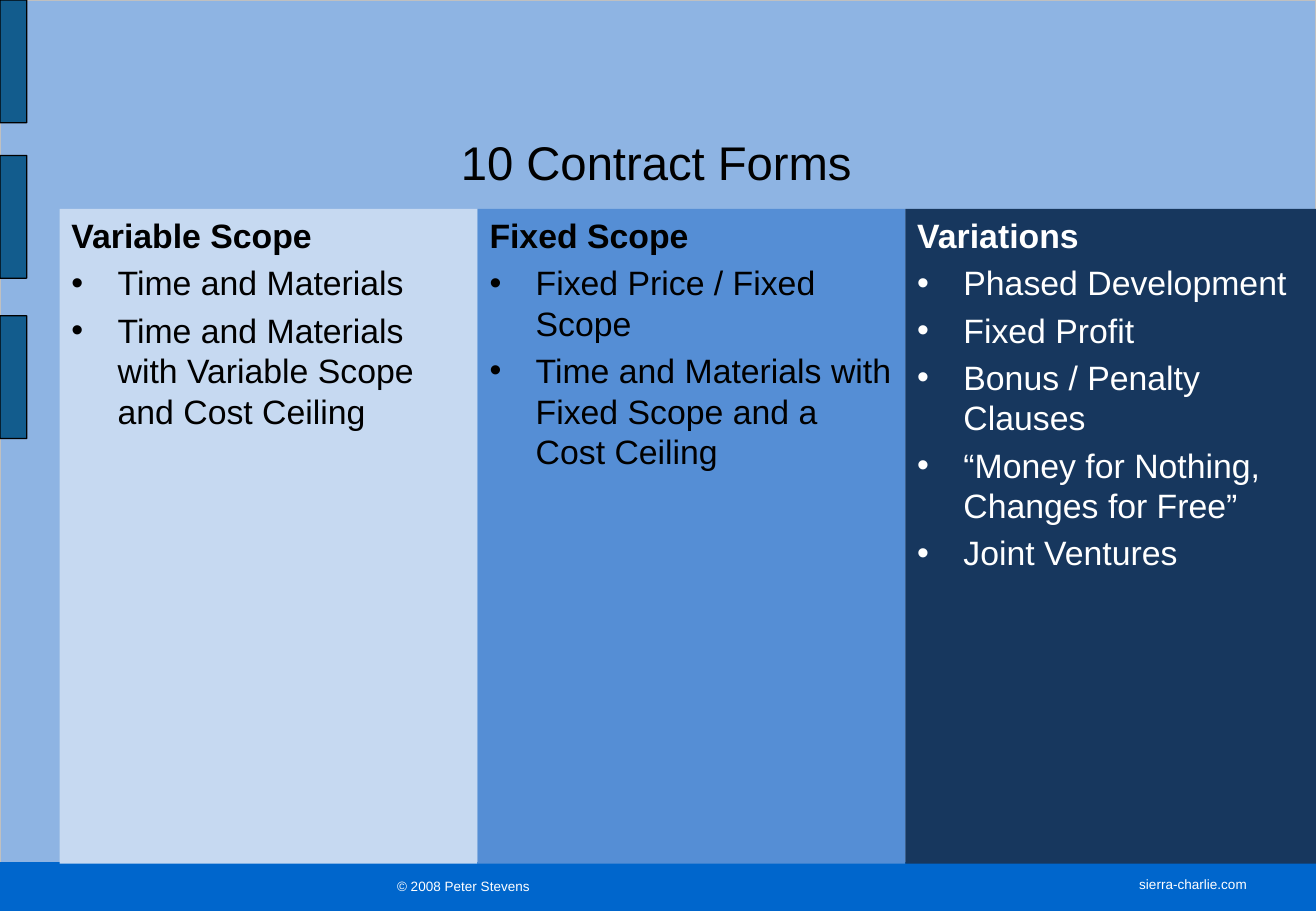
from dataclasses import dataclass

from lxml.etree import SubElement
from pptx import Presentation
from pptx.dml.color import RGBColor
from pptx.enum.shapes import MSO_SHAPE
from pptx.enum.text import MSO_ANCHOR, PP_ALIGN
from pptx.oxml.ns import qn
from pptx.util import Inches, Pt


@dataclass(frozen=True)
class Theme:
    font: str = "Arial"
    backdrop: str = "8EB4E3"
    backdrop_edge: str = "C0C0C0"
    tab: str = "125C8D"
    footer: str = "0066CC"
    pale: str = "C6D9F1"
    medium: str = "558ED5"
    navy: str = "17375E"
    dark: str = "000000"
    light: str = "FFFFFF"
    title_size: int = 28
    body_size: int = 20
    footer_size: int = 8


class ContractSlide:
    def __init__(self, presentation, theme):
        self.theme = theme
        self.slide = presentation.slides.add_slide(presentation.slide_layouts[6])

    def style(self, paragraph, size, color, bold=False):
        for run in paragraph.runs:
            run.font.name = self.theme.font
            run.font.size = Pt(size)
            run.font.bold = bold
            run.font.color.rgb = RGBColor.from_string(color)

    def block(self, kind, left, top, width, height, fill, edge=None):
        block = self.slide.shapes.add_shape(
            kind, Inches(left), Inches(top), Inches(width), Inches(height))
        block.shadow.inherit = False
        block.fill.solid()
        block.fill.fore_color.rgb = RGBColor.from_string(fill)
        if edge:
            block.line.color.rgb = RGBColor.from_string(edge)
            block.line.width = Pt(0.75)
        else:
            block.line.fill.background()
        return block

    def panel(self, left, top, width, height, fill, edge, rounding):
        panel = self.block(
            MSO_SHAPE.ROUNDED_RECTANGLE, left, top, width, height, fill, edge)
        panel.adjustments[0] = rounding

    def title(self, wording, left, top, width, height):
        frame = self.slide.shapes.add_textbox(
            Inches(left), Inches(top), Inches(width), Inches(height)).text_frame
        frame.word_wrap = True
        frame.vertical_anchor = MSO_ANCHOR.MIDDLE
        frame.text = wording
        heading = frame.paragraphs[0]
        heading.alignment = PP_ALIGN.CENTER
        self.style(heading, self.theme.title_size, self.theme.dark)

    def column(self, left, top, width, height, fill, color, heading, forms):
        frame = self.block(
            MSO_SHAPE.RECTANGLE, left, top, width, height, fill).text_frame
        frame.word_wrap = True
        frame.vertical_anchor = MSO_ANCHOR.TOP
        frame.text = "\n".join([heading, *forms])
        for index, entry in enumerate(frame.paragraphs):
            entry.alignment = PP_ALIGN.LEFT
            properties = entry._p.get_or_add_pPr()
            properties.set("marL", str(Inches(0.38)))
            properties.set("indent", str(-Inches(0.38)))
            if index:
                entry.space_before = Pt(4)
                SubElement(properties, qn("a:buFont"), typeface=self.theme.font)
                SubElement(properties, qn("a:buChar"), char="•")
            self.style(entry, self.theme.body_size, color, bold=index == 0)

    def footer(self, left, top, height, widths, wording, top_margins):
        table = self.slide.shapes.add_table(
            1, len(widths), Inches(left), Inches(top),
            Inches(sum(widths)), Inches(height)).table
        table.first_row = False
        table.horz_banding = False
        for index, width in enumerate(widths):
            table.columns[index].width = Inches(width)
            cell = table.cell(0, index)
            cell.vertical_anchor = MSO_ANCHOR.MIDDLE
            properties = cell._tc.get_or_add_tcPr()
            for side in ("lnL", "lnR", "lnT", "lnB"):
                SubElement(SubElement(properties, qn(f"a:{side}"), w="0"), qn("a:noFill"))
            cell.fill.solid()
            cell.fill.fore_color.rgb = RGBColor.from_string(self.theme.footer)
            if index in wording:
                cell.margin_left = cell.margin_right = Inches(0.11)
                cell.margin_top = Inches(top_margins[index])
                cell.margin_bottom = Inches(0.05)
                cell.text_frame.text = wording[index]
                credit = cell.text_frame.paragraphs[0]
                credit.alignment = PP_ALIGN.CENTER
                self.style(credit, self.theme.footer_size, self.theme.light)


def main():
    theme = Theme()
    presentation = Presentation()
    presentation.slide_width = Inches(10.83)
    presentation.slide_height = Inches(7.5)
    contracts = ContractSlide(presentation, theme)

    contracts.panel(0, 0, 10.83, 7.34, theme.backdrop, theme.backdrop_edge, 0)
    for tab_top in (0, 1.28, 2.6):
        contracts.panel(0, tab_top, 0.22, 1.01, theme.tab, theme.dark, 0.01)

    contracts.footer(
        0, 7.1, 0.4, (0.44, 0.59, 0.95, 3.67, 3.39, 1.56, 0.25),
        {3: "© 2008 Peter Stevens", 5: "sierra-charlie.com"},
        {3: 0.05, 5: 0.01})

    columns = (
        (3.44, theme.pale, theme.dark, "Variable Scope", (
            "Time and Materials",
            "Time and Materials with Variable Scope and Cost Ceiling")),
        (3.52, theme.medium, theme.dark, "Fixed Scope", (
            "Fixed Price / Fixed Scope",
            "Time and Materials with Fixed Scope and a Cost Ceiling")),
        (3.39, theme.navy, theme.light, "Variations", (
            "Phased Development",
            "Fixed Profit",
            "Bonus / Penalty Clauses",
            "“Money for Nothing, Changes for Free”",
            "Joint Ventures")),
    )
    left = 0.49
    for width, fill, color, heading, forms in columns:
        contracts.column(left, 1.72, width, 5.39, fill, color, heading, forms)
        left += width

    contracts.title("10 Contract Forms", 0.51, 0.94, 9.78, 0.78)
    presentation.save("out.pptx")


if __name__ == "__main__":
    main()
